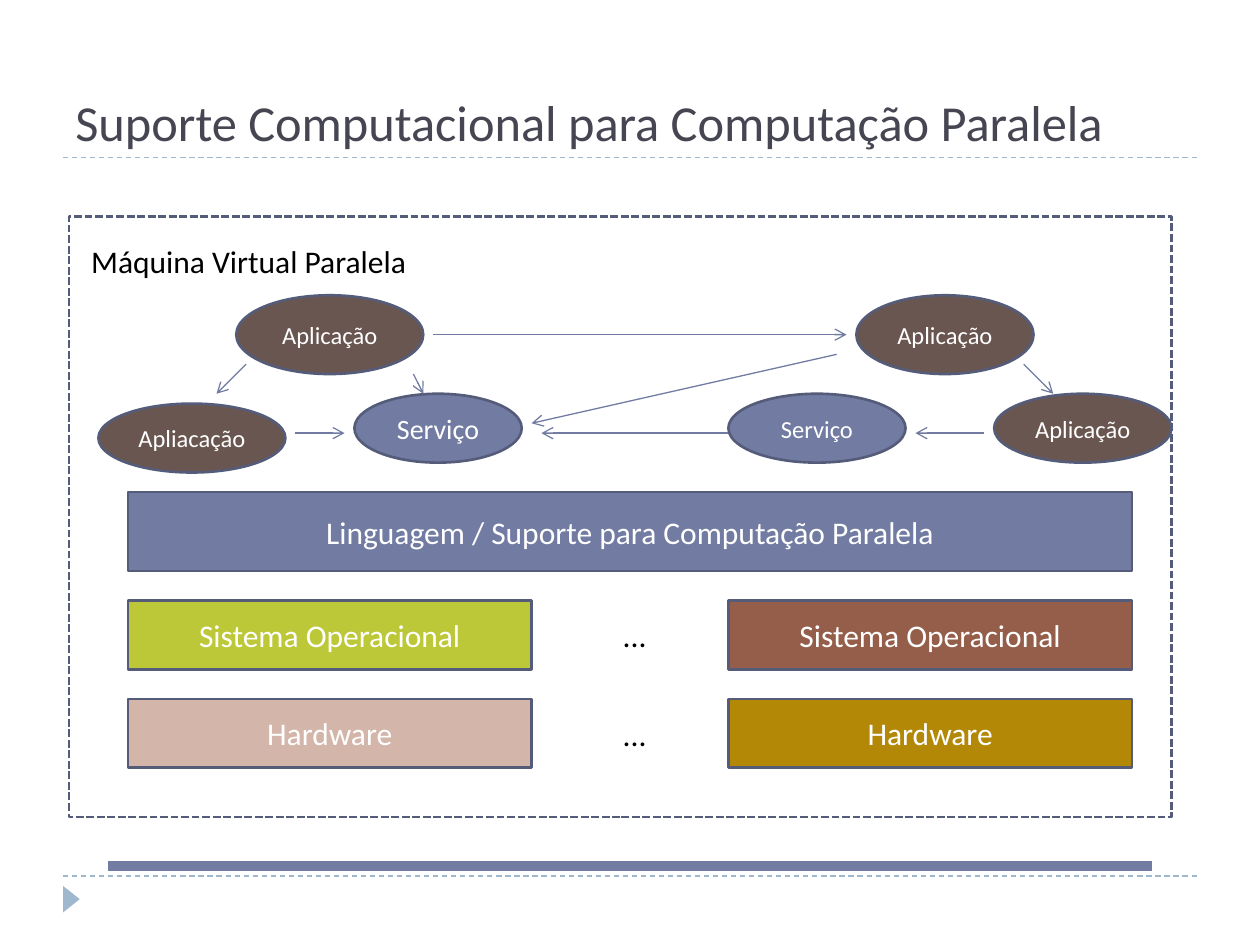
import dataclasses

import lxml.etree
import pptx
import pptx.dml.color
import pptx.enum.dml
import pptx.enum.shapes
import pptx.enum.text
import pptx.oxml.ns
import pptx.util

COLS = 128
KINDS = pptx.enum.shapes.MSO_SHAPE
DASHES = pptx.enum.dml.MSO_LINE
ALIGN = pptx.enum.text.PP_ALIGN
ANCHOR = pptx.enum.text.MSO_ANCHOR


@dataclasses.dataclass(frozen=True)
class Theme:
    """Colours, type sizes and line widths of the slide."""

    font: str = "Calibri"
    title: str = "464653"
    black: str = "000000"
    white: str = "FFFFFF"
    rule: str = "9FB8CD"
    edge: str = "545C79"
    blue: str = "727CA3"
    brown: str = "6A5650"
    pink: str = "D4B5AA"
    gold: str = "B38807"
    lime: str = "BCC838"
    rust: str = "955E4B"
    head: float = 28.8
    body: float = 18
    mid: float = 16
    small: float = 14
    thin: float = 0.75
    thick: float = 1.5
    bar: float = 6


THEME = Theme()


def unit(count):
    """Turn a count of grid columns or rows into a length."""
    return pptx.util.Inches(10 * count / COLS)


def tint(code):
    """Turn a hex code into a colour."""
    return pptx.dml.color.RGBColor.from_string(code)


def write(shape, text, size=THEME.body, color=THEME.white,
          align=ALIGN.CENTER, anchor=ANCHOR.MIDDLE):
    """Put formatted text in a shape."""
    frame = shape.text_frame
    frame.word_wrap = True
    frame.vertical_anchor = anchor
    para = frame.paragraphs[0]
    para.alignment = align
    run = para.add_run()
    run.text = text
    run.font.name = THEME.font
    run.font.size = pptx.util.Pt(size)
    run.font.color.rgb = tint(color)


def stroke(line, color, width, dash=None):
    """Set the colour, width and dash of a line."""
    line.color.rgb = tint(color)
    line.width = pptx.util.Pt(width)
    if dash is not None:
        line.dash_style = dash


def label(slide, area, text, color=THEME.black, **style):
    """Add a left-aligned text box."""
    box = slide.shapes.add_textbox(*map(unit, area))
    write(box, text, color=color, align=ALIGN.LEFT, **style)


def block(slide, kind, area, fill, edge=THEME.edge, dash=None):
    """Add a filled shape and return it."""
    shape = slide.shapes.add_shape(kind, *map(unit, area))
    shape.shadow.inherit = False
    shape.fill.solid()
    shape.fill.fore_color.rgb = tint(fill)
    if edge:
        stroke(shape.line, edge, THEME.thick, dash)
    else:
        shape.line.fill.background()
    return shape


def link(slide, ends, color=THEME.blue, width=THEME.thin, dash=None, arrow=False):
    """Add a straight line, with an arrowhead at its end if asked."""
    wire = slide.shapes.add_connector(
        pptx.enum.shapes.MSO_CONNECTOR.STRAIGHT, *map(unit, ends))
    stroke(wire.line, color, width, dash)
    name = pptx.oxml.ns.qn
    if arrow:
        lxml.etree.SubElement(wire.line._get_or_add_ln(), name("a:tailEnd"), type="arrow")
    lxml.etree.SubElement(wire.element.spPr, name("a:effectLst"))


def border(slide):
    """Add the title, the rules and the corner mark."""
    for row in (89, 16):
        link(slide, (6.4, row, 121.6, row), THEME.rule, dash=DASHES.DASH)
    mark = block(slide, KINDS.ISOSCELES_TRIANGLE, (5.9, 90.5, 2.7, 1.7), THEME.rule, edge=None)
    mark.rotation = 90
    label(slide, (6.4, 2.2, 115.2, 13.8), "Suporte Computacional para Computação Paralela",
          color=THEME.title, size=THEME.head, anchor=ANCHOR.BOTTOM)
    link(slide, (11, 88, 117, 88), width=THEME.bar)


def layers(slide):
    """Add the virtual machine frame and its stacked layers."""
    block(slide, KINDS.RECTANGLE, (7, 22, 112, 61), THEME.white, dash=DASHES.SQUARE_DOT)
    label(slide, (8, 24, 35, 5.1), "Máquina Virtual Paralela", anchor=ANCHOR.TOP)
    wide = block(slide, KINDS.RECTANGLE, (13, 50, 102, 8), THEME.blue)
    write(wide, "Linguagem / Suporte para Computação Paralela")
    stack = (
        (61, 62, "Sistema Operacional", THEME.lime, THEME.rust),
        (71, 72, "Hardware", THEME.pink, THEME.gold),
    )
    for row, dots, text, left, right in stack:
        for col, fill in ((13, left), (74, right)):
            write(block(slide, KINDS.RECTANGLE, (col, row, 41, 7), fill), text)
        label(slide, (62, dots, 8, 5.1), "...", anchor=ANCHOR.TOP)


def nodes(slide):
    """Add the applications, the services and the arrows between them."""
    ovals = (
        ((24, 30, 19, 8), "Aplicação", THEME.brown, THEME.small),
        ((87, 30, 18, 8), "Aplicação", THEME.brown, THEME.small),
        ((74, 40, 18, 7), "Serviço", THEME.blue, THEME.small),
        ((101, 40, 18, 7), "Aplicação", THEME.brown, THEME.small),
        ((10, 41, 19, 7), "Apliacação", THEME.brown, THEME.small),
        ((36, 40, 17, 7), "Serviço", THEME.blue, THEME.mid),
    )
    for area, text, fill, size in ovals:
        write(block(slide, KINDS.OVAL, area, fill), text, size=size)
    arrows = (
        (25, 37, 22, 40), (30, 44, 35, 44), (42, 38, 43, 40), (44, 34, 86, 34),
        (85, 36, 54, 43), (100, 44, 93, 44), (74, 44, 55, 44), (104, 37, 107, 40),
    )
    for ends in arrows:
        link(slide, ends, arrow=True)


def main():
    """Build and save the slide."""
    deck = pptx.Presentation()
    deck.slide_width, deck.slide_height = unit(COLS), unit(96)
    slide = deck.slides.add_slide(deck.slide_layouts[6])
    border(slide)
    layers(slide)
    nodes(slide)
    deck.save("out.pptx")


if __name__ == "__main__":
    main()
